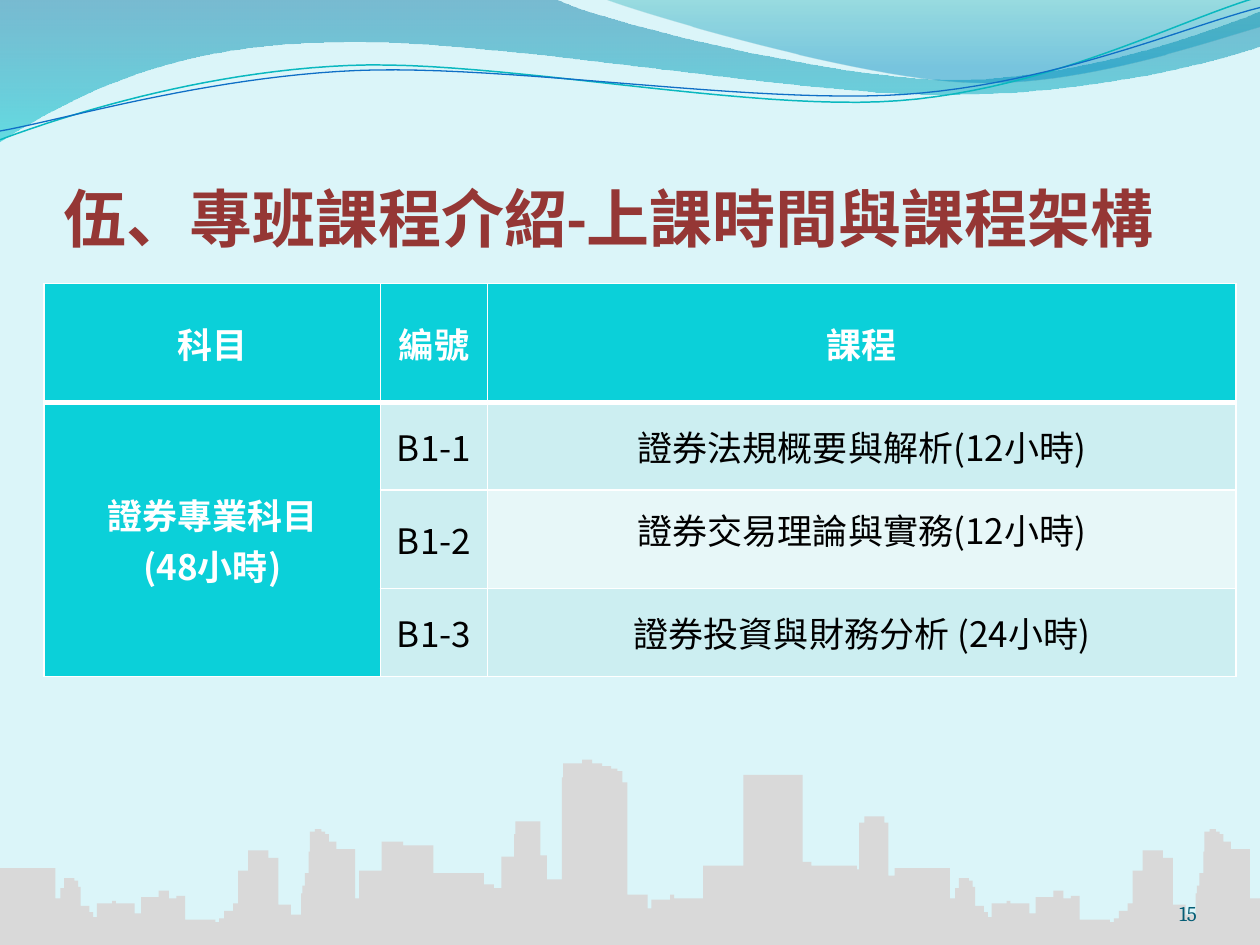
import collections

import lxml.etree
import pptx
import pptx.dml.color
import pptx.enum.dml
import pptx.enum.text
import pptx.oxml
import pptx.oxml.ns
import pptx.util

Cm = pptx.util.Cm
Pt = pptx.util.Pt
RGBColor = pptx.dml.color.RGBColor
PP_ALIGN = pptx.enum.text.PP_ALIGN
MSO_ANCHOR = pptx.enum.text.MSO_ANCHOR
qn = pptx.oxml.ns.qn
Box = collections.namedtuple("Box", "left top width height")

BACKGROUND = RGBColor(0xDB, 0xF5, 0xF9)
WHITE = RGBColor(0xFF, 0xFF, 0xFF)
BLACK = RGBColor(0, 0, 0)
HEADING = RGBColor(0x95, 0x37, 0x35)
TURQUOISE = RGBColor(0x0B, 0xD0, 0xD9)
BAND_DARK = RGBColor(0xCC, 0xEE, 0xF1)
BAND_LIGHT = RGBColor(0xE7, 0xF7, 0xF8)
SKYLINE_GREY = RGBColor(0xD9, 0xD9, 0xD9)
NUMBER_BLUE = RGBColor(0x04, 0x5D, 0x75)
DEEP_BLUE = RGBColor(0x00, 0x74, 0xA1)
DEEP_CYAN = RGBColor(0x00, 0xC6, 0xCF)
SEA_GREEN = RGBColor(0x00, 0xA1, 0xA9)
SKY_BLUE = RGBColor(0x00, 0x8B, 0xBF)
LINE_CYAN = RGBColor(0x0A, 0xB8, 0xBF)
LINE_BLUE = RGBColor(0x0F, 0x6F, 0xC6)
CJK_FONT = "Noto Sans CJK SC"

# Waves, in hundredths of the slide width: a start point, then a line (one point)
# or a Bezier curve (two controls and an end point) for each entry.
BROAD_WAVE = [
    [(0, -0.1)], [(44, -0.1)],
    [(47.6, 1.7), (66.4, 6.3), (75.8, 6.3)], [(85.3, 6.3), (95.8, 2.6), (100, 0.9)],
    [(100.1, 3.6)], [(98.3, 4.4), (87, 7.6), (74.6, 7.5)],
    [(62.2, 7.5), (38.2, 2.8), (25.7, 3.4)], [(12.9, 3.5), (4.6, 8.3), (-0.1, 11.3)],
]
RIGHT_WAVE = [
    [(47.9, -0.1)], [(50.9, 1.1), (68.2, 6.2), (76.9, 6.5)],
    [(85.6, 6.9), (96.1, 3.2), (100, 2.1)], [(100, 0)],
]
CYAN_CURVE = [
    [(0, 11.1)], [(4.8, 9.3), (15.8, 5.7), (27.7, 5.2)],
    [(39.5, 4.7), (59.3, 8.9), (71.3, 8)], [(83.3, 7.1), (93.8, 1.5), (99.8, -0.2)],
]
BLUE_CURVE = [
    [(0, 10.4)], [(4.7, 9.6), (16.4, 6.1), (28.3, 5.6)],
    [(40.3, 5.1), (59.7, 8.3), (71.7, 7.5)], [(83.6, 6.7), (94.1, 2.1), (100, 0.6)],
]

# Skyline steps: (left edge, roof height above the ground), in hundredths of the slide width.
TOWN_PERIOD = 71
TOWN = [
    (0, 6.1), (4.4, 3.7), (4.8, 4.5), (5.1, 5.3), (5.9, 5.1), (6.2, 4.6), (6.4, 3.1),
    (7.1, 2.6), (7.4, 2.2), (7.7, 3.3), (8.9, 3.5), (9.2, 3.3), (10.7, 2.5), (11.2, 3.8),
    (12.6, 4.3), (13.4, 3.7), (14, 3.9), (14.7, 2), (17.1, 1.8), (17.4, 2.1), (17.8, 2.7),
    (18.5, 3.3), (18.9, 5.9), (19.7, 7.5), (21.3, 6.9), (22.1, 3.2), (23.1, 2.4),
    (23.9, 4.1), (24, 4.7), (24.2, 5.7), (24.5, 7.4), (24.6, 9), (25, 9.2), (25.5, 9),
    (25.8, 8.8), (26.1, 8.2), (26.7, 7.6), (28.2, 3.7),
]
CENTRE = [
    (28.5, 5.9), (30.3, 8.2), (32, 7.9), (34.4, 5.7), (38.4, 4.8), (39.2, 4.5), (39.8, 7),
    (40.8, 8.8), (40.9, 9.8), (42.9, 7.1), (43.4, 5.2), (44.6, 13.3), (44.7, 14.4),
    (46.2, 14.7), (47, 14.4), (47.8, 14.2), (48.5, 14), (49, 13.8), (49.4, 12.9),
    (49.8, 4), (51.4, 2.9), (51.7, 3.6), (53.2, 4), (53.5, 3.7), (55.8, 6.3), (59, 13.5),
    (63.7, 6.6), (64.4, 6.3), (68, 6), (68.2, 9.7), (68.6, 10.2), (70.2, 9.7),
    (70.5, 5.5),
]


def flatten(segments, steps=24):
    """Turn lines and Bezier curves into a list of points."""
    points = [segments[0][0]]
    for segment in segments[1:]:
        if len(segment) == 1:
            points.append(segment[0])
            continue
        controls = [points[-1], *segment]
        for step in range(1, steps + 1):
            t = step / steps
            weights = ((1 - t) ** 3, 3 * t * (1 - t) ** 2, 3 * t * t * (1 - t), t ** 3)
            points.append(tuple(sum(w * c[axis] for w, c in zip(weights, controls))
                                for axis in (0, 1)))
    return points


def add_outline(slide, box, points, closed=True):
    """Draw points given in hundredths of the box width."""
    unit = box.width / 100
    placed = [(box.left + x * unit, box.top + y * unit) for x, y in points]
    builder = slide.shapes.build_freeform(*placed[0])
    builder.add_line_segments(placed[1:], close=closed)
    shape = builder.convert_to_shape()
    shape.shadow.inherit = False
    return shape


def add_wave(slide, box, segments, stops):
    """Draw a translucent wave; stops are (position, colour, opacity in percent)."""
    shape = add_outline(slide, box, flatten(segments))
    shape.line.fill.background()
    shape.fill.gradient()
    shape.fill.gradient_angle = 270
    for stop, (position, color, opacity) in zip(shape.fill.gradient_stops, stops):
        stop.position = position
        stop.color.rgb = color
    colors = shape.element.spPr.findall(".//" + qn("a:gs") + "/" + qn("a:srgbClr"))
    for color, (_, _, opacity) in zip(colors, stops):
        lxml.etree.SubElement(color, qn("a:alpha")).set("val", str(opacity * 1000))


def add_waves(slide, box):
    add_wave(slide, box, BROAD_WAVE, [(0, DEEP_BLUE, 45), (1, DEEP_CYAN, 55)])
    add_wave(slide, box, RIGHT_WAVE, [(0, SEA_GREEN, 30), (0.8, SKY_BLUE, 45)])
    for segments, color, width in ((CYAN_CURVE, LINE_CYAN, 0.85),
                                   (BLUE_CURVE, LINE_BLUE, 0.75)):
        curve = add_outline(slide, box, flatten(segments), closed=False)
        curve.fill.background()
        curve.line.color.rgb = color
        curve.line.width = Pt(width)


def add_skyline(slide, box):
    ground = box.height / box.width * 100
    repeat = [(x + TOWN_PERIOD, roof) for x, roof in TOWN]
    steps = TOWN + CENTRE + repeat + [(100, 3.3)]
    points = [(0, ground)]
    for (x, roof), (next_x, _) in zip(steps, steps[1:]):
        points += [(x, ground - roof), (next_x, ground - roof)]
    shape = add_outline(slide, box, points + [(100, ground)])
    shape.fill.solid()
    shape.fill.fore_color.rgb = SKYLINE_GREY
    shape.line.fill.background()


def format_text(text_frame, size, font, color, bold=False, align=PP_ALIGN.LEFT):
    for paragraph in text_frame.paragraphs:
        paragraph.alignment = align
        for run in paragraph.runs:
            run.font.size, run.font.name, run.font.bold = Pt(size), font, bold
            run.font.color.rgb = color
            east_asian = lxml.etree.SubElement(run.font._element, qn("a:ea"))
            east_asian.set("typeface", CJK_FONT)


def set_frame(text_frame, top=0):
    text_frame.word_wrap = True
    text_frame.auto_size = pptx.enum.text.MSO_AUTO_SIZE.NONE
    text_frame.vertical_anchor = MSO_ANCHOR.BOTTOM
    text_frame.margin_left = text_frame.margin_right = text_frame.margin_bottom = 0
    text_frame.margin_top = top


def place_title(slide, box, text):
    title = slide.shapes.title
    title.left, title.top, title.width, title.height = box
    set_frame(title.text_frame, Cm(0.13))
    title.text_frame.text = text
    format_text(title.text_frame, 36, "Calibri", HEADING, bold=True)


def add_page_number(slide, box, text):
    text_frame = slide.shapes.add_textbox(*box).text_frame
    set_frame(text_frame)
    text_frame.text = text
    format_text(text_frame, 12, "Cambria", NUMBER_BLUE, align=PP_ALIGN.RIGHT)


def set_borders(cell, **widths):
    """Draw white borders; widths in points by side (L, R, T, B)."""
    properties = cell._tc.get_or_add_tcPr()
    for index, side in enumerate("LRTB"):
        border = pptx.oxml.parse_xml(
            f'<a:ln{side} xmlns:a="http://schemas.openxmlformats.org/drawingml/2006/main" '
            f'w="{Pt(widths.get(side, 1))}"><a:solidFill><a:srgbClr val="{WHITE}"/>'
            f'</a:solidFill></a:ln{side}>')
        properties.insert(index, border)


def add_course_table(slide, box, rows):
    table = slide.shapes.add_table(len(rows), len(rows[0]), *box).table
    for column, width in zip(table.columns, (6.78, 2.16, 15.09)):
        column.width = Cm(width)
    for row, height in zip(table.rows, (2.39, 1.77, 1.98, 1.78)):
        row.height = Cm(height)
    for r, row in enumerate(rows):
        for c, text in enumerate(row):
            cell = table.cell(r, c)
            strong = r == 0 or c == 0
            cell.text_frame.text = text
            cell.vertical_anchor = MSO_ANCHOR.MIDDLE
            cell.margin_left = cell.margin_right = Cm(0.18)
            cell.margin_top = cell.margin_bottom = 0
            format_text(cell.text_frame, 20, CJK_FONT, WHITE if strong else BLACK,
                        strong, PP_ALIGN.CENTER)
            cell.fill.solid()
            cell.fill.fore_color.rgb = (TURQUOISE if strong else
                                        BAND_LIGHT if (r, c) == (2, 2) else BAND_DARK)
            set_borders(cell, B=3 if r == 0 else 1, T=3 if r == 1 else 1)
    table.cell(1, 0).merge(table.cell(len(rows) - 1, 0))
    tight = table.cell(2, 2).text_frame.paragraphs[0]
    tight.line_spacing, tight.space_before = Pt(17), Pt(2)


def main():
    presentation = pptx.Presentation()
    presentation.slide_width, presentation.slide_height = Cm(25.4), Cm(19.05)
    slide = presentation.slides.add_slide(presentation.slide_layouts.get_by_name("Title Only"))
    slide.background.fill.solid()
    slide.background.fill.fore_color.rgb = BACKGROUND
    add_waves(slide, Box(0, 0, Cm(25.4), Cm(2.9)))
    add_skyline(slide, Box(0, Cm(15.32), Cm(25.4), Cm(3.73)))
    add_page_number(slide, Box(Cm(22.02), Cm(17.65), Cm(2.11), Cm(1.02)), "15")
    add_course_table(slide, Box(Cm(0.89), Cm(5.72), Cm(24.03), Cm(7.92)), [
        ("科目", "編號", "課程"),
        ("證券專業科目\n(48小時)", "B1-1", "證券法規概要與解析(12小時)"),
        ("", "B1-2", "證券交易理論與實務(12小時)"),
        ("", "B1-3", "證券投資與財務分析 (24小時)"),
    ])
    place_title(slide, Box(Cm(1.27), Cm(1.96), Cm(22.86), Cm(3.18)),
                "伍、專班課程介紹-上課時間與課程架構")
    presentation.save("out.pptx")


if __name__ == "__main__":
    main()
